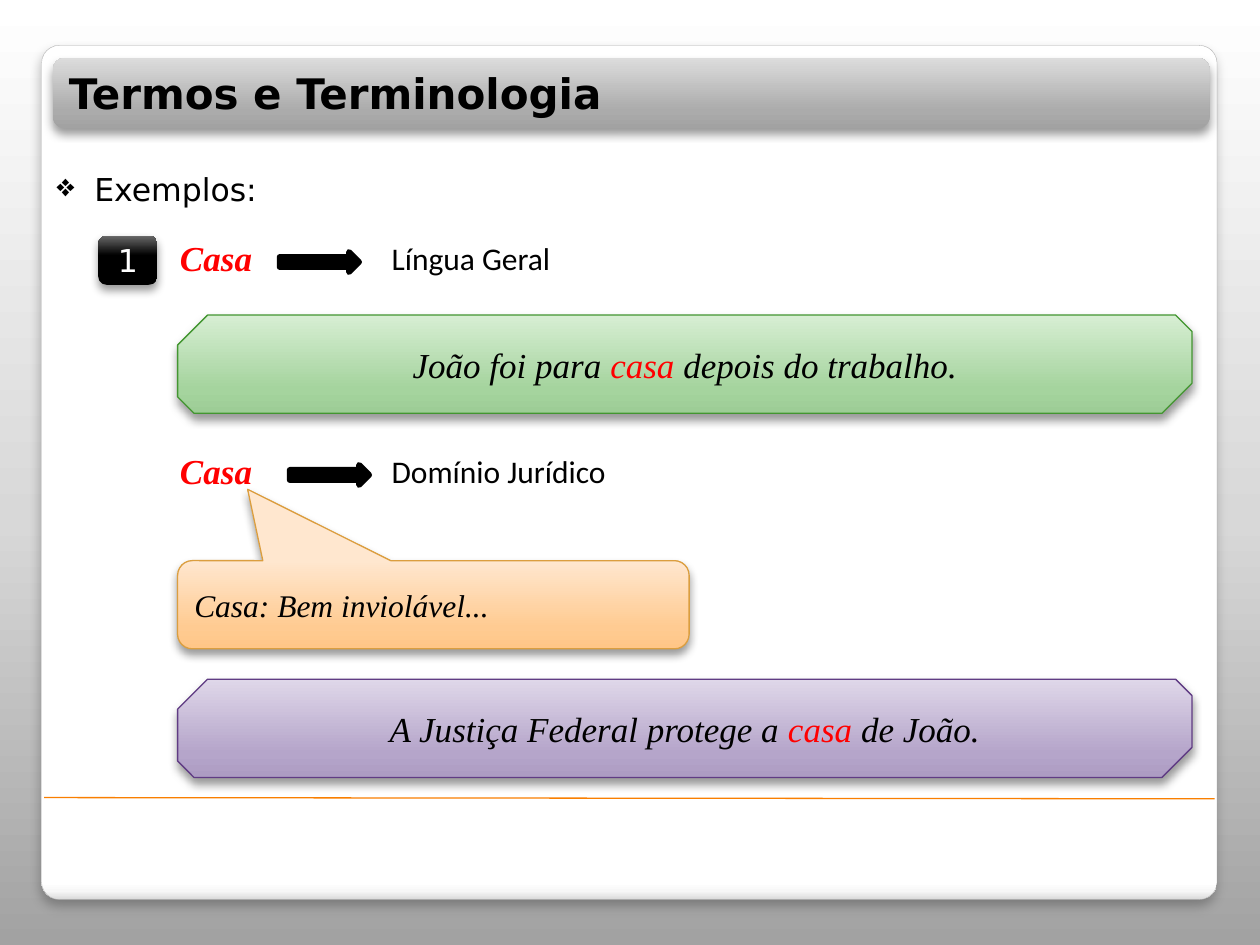
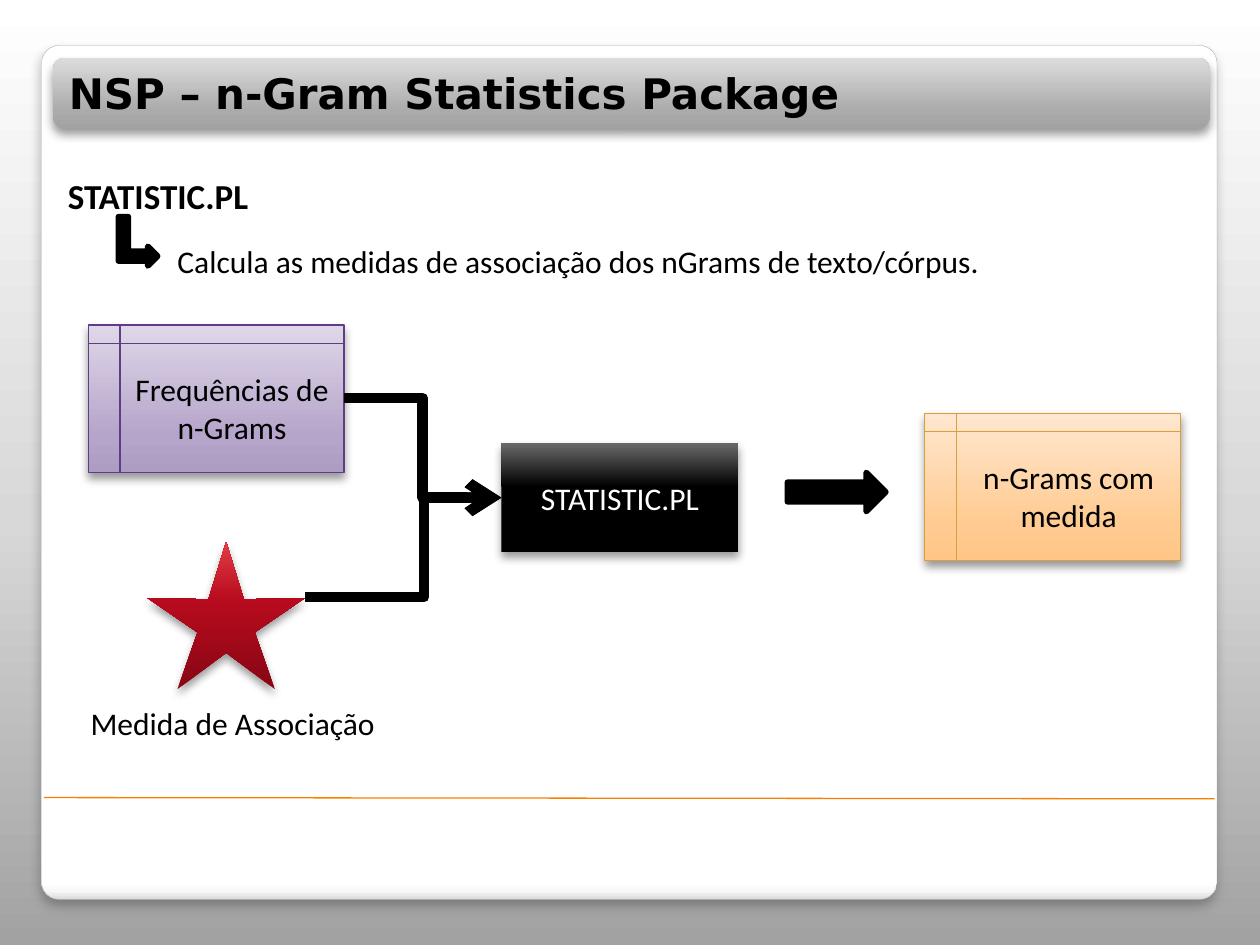
import pptx
import pptx.dml.color
import pptx.enum.shapes
import pptx.enum.text
import pptx.oxml.ns
import pptx.util
from lxml import etree

Inches = pptx.util.Inches
Pt = pptx.util.Pt
SHAPE = pptx.enum.shapes.MSO_SHAPE
CONNECTOR = pptx.enum.shapes.MSO_CONNECTOR
ALIGN = pptx.enum.text.PP_ALIGN
ANCHOR = pptx.enum.text.MSO_ANCHOR
qn = pptx.oxml.ns.qn

# Shared colours and fonts
BLACK, WHITE, RED, ORANGE = "000000", "FFFFFF", "FF0000", "F97F00"
HEAD_FONT, BODY_FONT, EXAMPLE_FONT = "DejaVu Sans", "Calibri", "Times New Roman"

# Gradients: (position, colour) stops, from the bottom up
PAGE = [(0, "A2A2A2"), (45, "D8D8D8"), (100, WHITE)]
PANEL = [(0, "DADADA"), (1, "F7F7F7"), (2, WHITE), (100, WHITE)]
SILVER = [(0, "A2A2A2"), (25, "ABABAB"), (100, "DCDCDC")]
COAL = [(0, BLACK), (60, BLACK), (100, "696969")]
RUBY = [(0, "870614"), (60, "B80B1E"), (100, "E13C45")]
GREEN = [(0, "9DCD96"), (25, "A5D49E"), (100, "D7EED3")]
PURPLE = [(0, "AD9CC3"), (25, "B5A5CA"), (100, "DFD7E9")]
PEACH = [(0, "FFC687"), (25, "FFCB92"), (100, "FFE7CF")]
GREEN_EDGE, PURPLE_EDGE, PEACH_EDGE = "439631", "603C84", "DB9E3F"

# Shadows: opacity in percent, blur and distance in points
SOFT_SHADOW = (25, 6, 4)
FIRM_SHADOW = (40, 5.2, 3)


def rgb(hex_text):
    return pptx.dml.color.RGBColor.from_string(hex_text)


def add_node(parent, tag, **attributes):
    values = {name: str(value) for name, value in attributes.items()}
    return etree.SubElement(parent, qn(tag), values)


def paint_gradient(fill, element, stops):
    """Fill with a vertical gradient that runs from bottom to top."""
    fill.gradient()
    gradient = element.find(".//" + qn("a:gradFill"))
    stop_list = gradient.find(qn("a:gsLst"))
    for stop in list(stop_list):
        stop_list.remove(stop)
    for position, color in stops:
        stop = add_node(stop_list, "a:gs", pos=position * 1000)
        add_node(stop, "a:srgbClr", val=color)
    gradient.find(qn("a:lin")).set("ang", str(270 * 60000))


def cast_shadow(shape, opacity, blur, distance):
    effects = shape._element.spPr.find(qn("a:effectLst"))
    shadow = add_node(effects, "a:outerShdw", blurRad=Pt(blur), dist=Pt(distance),
                      dir=90 * 60000, algn="ctr", rotWithShape=0)
    color = add_node(shadow, "a:srgbClr", val=BLACK)
    add_node(color, "a:alpha", val=opacity * 1000)


def write(shape, text, size=18, font=BODY_FONT, color=BLACK, bold=False, italic=False,
          align=ALIGN.LEFT, anchor=ANCHOR.MIDDLE, spacing=None, bullet=None, accent=None):
    """Write one paragraph; the accent word in it turns red."""
    frame = shape.text_frame
    frame.word_wrap = True
    frame.vertical_anchor = anchor
    para = frame.paragraphs[0]
    para.alignment = align
    if spacing:
        para.line_spacing = spacing
    if bullet:
        properties = para._p.get_or_add_pPr()
        properties.set("marL", str(Inches(0.3)))
        properties.set("indent", str(-Inches(0.3)))
        add_node(properties, "a:buChar", char=bullet)
    for part in text.partition(accent) if accent else [text]:
        span = para.add_run()
        span.text = part
        span.font.size = Pt(size)
        span.font.name = font
        span.font.bold = bold
        span.font.italic = italic
        span.font.color.rgb = rgb(RED if part == accent else color)


class SlideMaker:
    """Holds the deck, its style and the current page."""

    def __init__(self):
        self.deck = pptx.Presentation()
        self.deck.slide_width = Inches(10)
        self.deck.slide_height = Inches(7.5)
        self.page = None

    def start_page(self, title):
        self.page = self.deck.slides.add_slide(self.deck.slide_layouts[6])
        paint_gradient(self.page.background.fill, self.page._element, PAGE)
        self.shape(SHAPE.ROUNDED_RECTANGLE, (0.33, 0.36, 9.33, 6.78), PANEL, "A4A4A4",
                   line_width=0.16, adjustments=[0.021], shadow=SOFT_SHADOW)
        self.connector((0.35, 6.33), (9.64, 6.34), ORANGE, 0.75)
        band = self.shape(SHAPE.ROUNDED_RECTANGLE, (0.42, 0.46, 9.18, 0.56), SILVER)
        write(band, title, size=24, font=HEAD_FONT, bold=True)

    def shape(self, kind, place, fill, line=None, line_width=0.75, adjustments=(),
              shadow=FIRM_SHADOW):
        shape = self.page.shapes.add_shape(kind, *map(Inches, place))
        shape.shadow.inherit = False
        for index, value in enumerate(adjustments):
            shape.adjustments[index] = value
        if isinstance(fill, str):
            shape.fill.solid()
            shape.fill.fore_color.rgb = rgb(fill)
        else:
            paint_gradient(shape.fill, shape._element, fill)
        if line:
            shape.line.color.rgb = rgb(line)
            shape.line.width = Pt(line_width)
        else:
            shape.line.fill.background()
        if shadow:
            cast_shadow(shape, *shadow)
        return shape

    def block_arrow(self, place, kind=SHAPE.RIGHT_ARROW, rotation=0):
        arrow = self.shape(kind, place, BLACK, BLACK, line_width=3.35, shadow=None)
        arrow.rotation = rotation

    def label(self, place, text, **style):
        box = self.page.shapes.add_textbox(*map(Inches, place))
        write(box, text, anchor=ANCHOR.TOP, **style)

    def connector(self, start, end, color, width, bend=None):
        """Draw a plain line, or with a bend an elbow that ends in an arrow."""
        kind = CONNECTOR.ELBOW if bend else CONNECTOR.STRAIGHT
        line = self.page.shapes.add_connector(kind, *map(Inches, start + end))
        line.line.color.rgb = rgb(color)
        line.line.width = Pt(width)
        properties = line._element.spPr
        if bend:
            add_node(line.line._get_or_add_ln(), "a:tailEnd", type="arrow")
            geometry = properties.find(qn("a:prstGeom"))
            guides = geometry.find(qn("a:avLst"))
            if guides is None:
                guides = add_node(geometry, "a:avLst")
            add_node(guides, "a:gd", name="adj1", fmla=f"val {round(bend * 100000)}")
        add_node(properties, "a:effectLst")

    # Elements of the examples page
    def term(self, top, meaning, arrow_left):
        self.label((1.33, top, 1.02, 0.44), "Casa", size=20, font=EXAMPLE_FONT,
                   color=RED, bold=True, italic=True)
        self.block_arrow((arrow_left, top + 0.17, 0.63, 0.16))
        self.label((3.01, top + 0.02, 3.86, 0.4), meaning)

    def sentence(self, top, text, fill, line):
        plate = self.shape(SHAPE.SNIP_2_DIAG_RECTANGLE, (1.41, top, 8.05, 0.78), fill, line,
                           adjustments=[0.305, 0.167])
        write(plate, text, size=20, font=EXAMPLE_FONT, italic=True, align=ALIGN.CENTER,
              accent="casa")

    # Element of the process page
    def data_store(self, left, top, text, fill, line):
        store = self.shape(SHAPE.FLOWCHART_INTERNAL_STORAGE, (left, top, 2.03, 1.17), fill, line)
        write(store, text, align=ALIGN.CENTER)


def build_examples(maker):
    maker.start_page("Termos e Terminologia")
    maker.label((0.35, 1.15, 9.18, 0.49), "Exemplos:", font=HEAD_FONT, spacing=1.5, bullet="❖")
    number = maker.shape(SHAPE.ROUNDED_RECTANGLE, (0.78, 1.87, 0.47, 0.39), COAL)
    write(number, "1", font=HEAD_FONT, color=WHITE, align=ALIGN.CENTER)

    # General language
    maker.term(1.83, "Língua Geral", arrow_left=2.22)
    maker.sentence(2.5, "João foi para casa depois do trabalho.", GREEN, GREEN_EDGE)

    # Legal domain
    maker.term(3.52, "Domínio Jurídico", arrow_left=2.3)
    callout = maker.shape(SHAPE.ROUNDED_RECTANGULAR_CALLOUT, (1.41, 4.45, 4.06, 0.7), PEACH,
                          PEACH_EDGE, adjustments=[-0.363, -1.309, 0.167])
    write(callout, "Casa: Bem inviolável...", font=EXAMPLE_FONT, italic=True)
    maker.sentence(5.39, "A Justiça Federal protege a casa de João.", PURPLE, PURPLE_EDGE)


def build_process(maker):
    maker.start_page("NSP – n-Gram Statistics Package")

    # Program and its purpose
    maker.label((0.44, 1.17, 2.27, 0.61), "STATISTIC.PL", size=20, bold=True, spacing=1.5)
    maker.label((1.31, 1.72, 8.22, 0.56),
                "Calcula as medidas de associação dos nGrams de texto/córpus.", spacing=1.5)
    maker.block_arrow((0.9, 1.76, 0.39, 0.31), SHAPE.BENT_UP_ARROW, rotation=90)

    # Inputs
    maker.data_store(0.7, 2.58, "Frequências de n-Grams", PURPLE, PURPLE_EDGE)
    maker.shape(SHAPE.STAR_5_POINT, (1.17, 4.3, 1.25, 1.17), RUBY, adjustments=[0.182])
    maker.label((0.62, 5.39, 2.58, 0.56), "Medida de Associação", spacing=1.5)

    # Program and output
    program = maker.shape(SHAPE.RECTANGLE, (3.98, 3.52, 1.88, 0.86), COAL)
    write(program, "STATISTIC.PL", color=WHITE, align=ALIGN.CENTER)
    program_entry = (3.98, 3.95)
    maker.connector((2.73, 3.16), program_entry, BLACK, 6, bend=0.5)
    maker.connector((2.42, 4.74), program_entry, BLACK, 6, bend=0.607)
    maker.block_arrow((6.25, 3.75, 0.78, 0.31))
    maker.data_store(7.34, 3.28, "n-Grams com medida", PEACH, PEACH_EDGE)


def main():
    maker = SlideMaker()
    build_examples(maker)
    build_process(maker)
    maker.deck.save("out.pptx")


if __name__ == "__main__":
    main()
